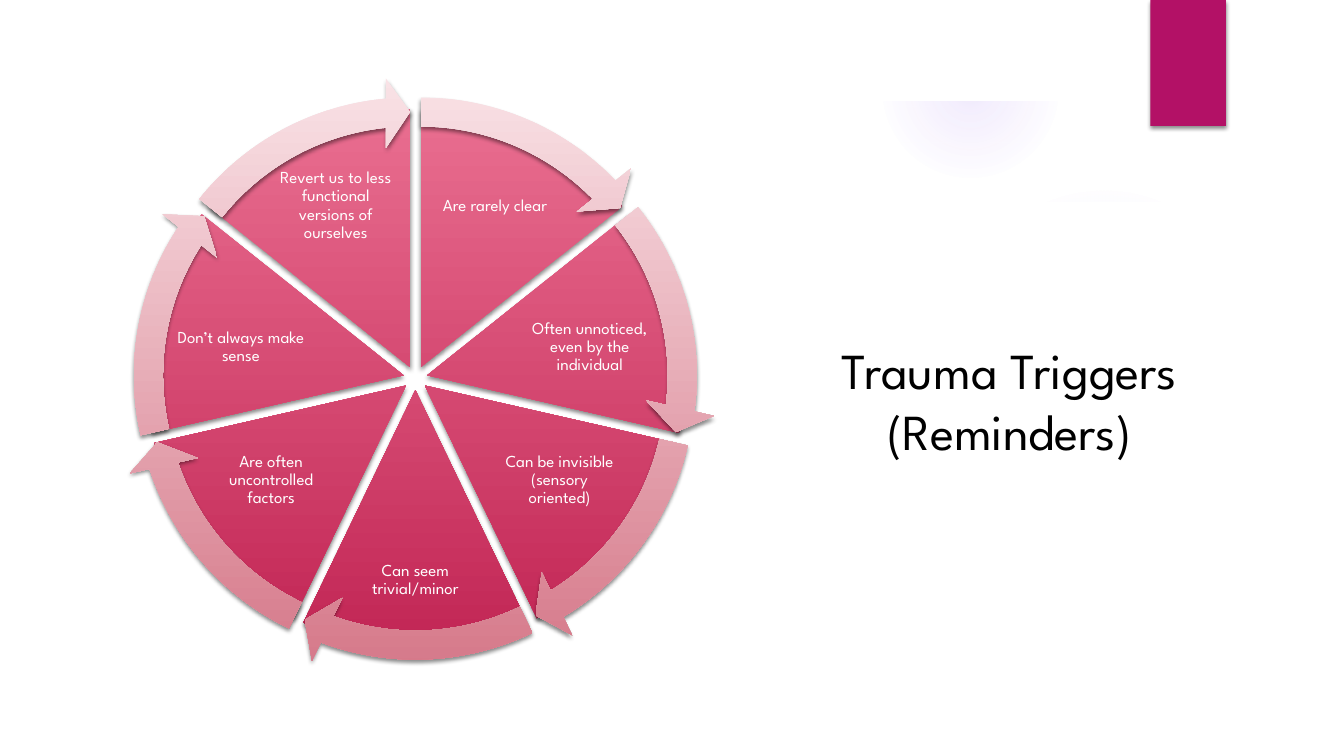
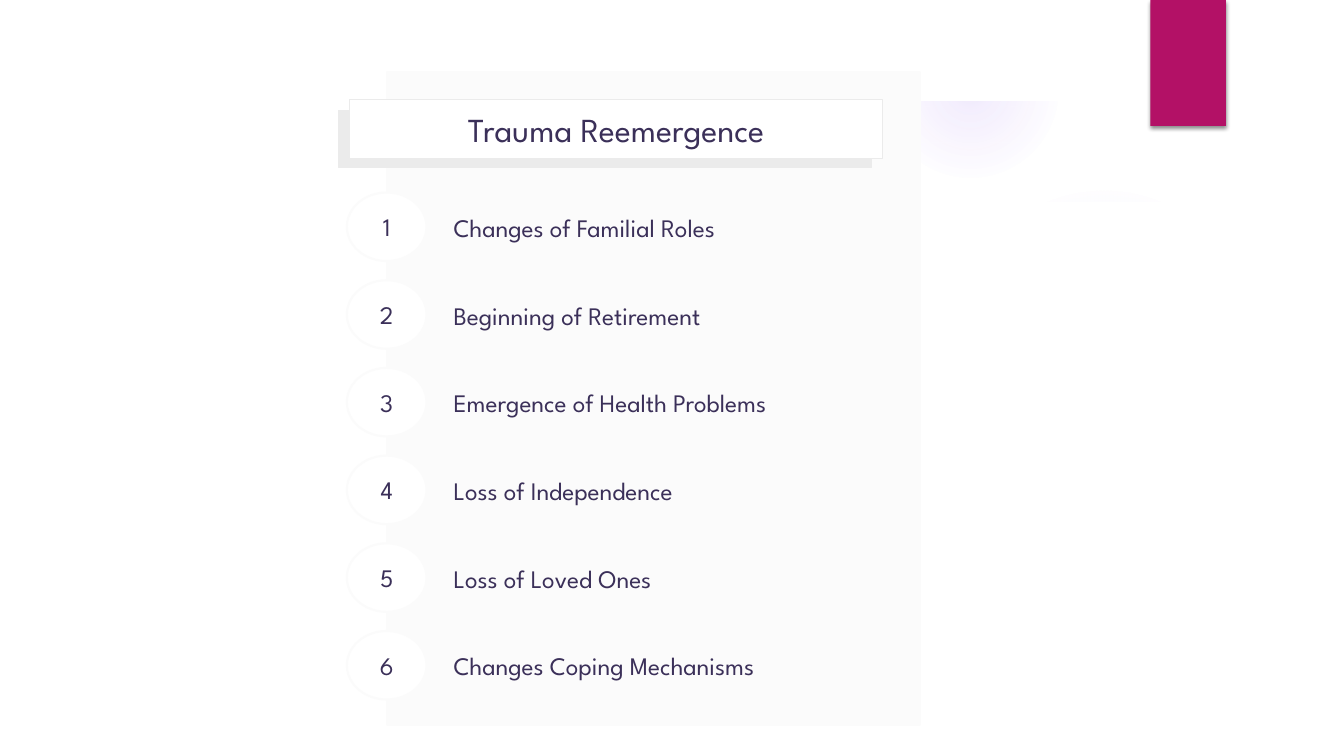
"""Build two slides on trauma: a wheel of triggers and a numbered list."""
import math
import pptx
import pptx.dml.color
import pptx.enum.shapes
import pptx.enum.text
import pptx.oxml
import pptx.oxml.ns
import pptx.util

Inch = pptx.util.Inches
Kind = pptx.enum.shapes.MSO_SHAPE
Align = pptx.enum.text.PP_ALIGN
Mid = pptx.enum.text.MSO_ANCHOR.MIDDLE
FONT = "League Spartan"
WIDE, HIGH = 13.33, 7.5
BLACK, WHITE, INK, TAB = "000000", "FFFFFF", "3B3059", "B31166"
PALE, GREY, GLOW = "FBFBFB", "EBEBEB", "9B6BF2"
WEDGE = [(0, "E96E90", 100), (100, "C22655", 100)]
ARROW = [(0, "F9E2E6", 100), (100, "D57788", 100)]

GLOWS = [
    ((9.41, 1.83, 3.08, 3.08), [(0, GLOW, 7), (36, GLOW, 6), (69, GLOW, 0)]),
    ((8.75, 0.01, 1.75, 1.75), [(0, GLOW, 14), (36, GLOW, 7), (73, GLOW, 0)]),
]
SWOOSH = [(9.34, 2.5), (10.5, 2.46), (11.7, 2.32), (12.89, 2.14), (12.83, 1.66),
          (12.25, 1.85), (11.67, 2), (11.09, 2.14), (10.53, 2.25), (9.99, 2.34), (9.3, 2.43)]
HILL = [(0.5, 2.04), (0.5, 7), (12.84, 7), (12.84, 2.04), (12.28, 2.13), (11.72, 2.2),
        (11.16, 2.27), (10.6, 2.32), (10.04, 2.37), (9.49, 2.41), (8.94, 2.44), (8.4, 2.46),
        (7.34, 2.48), (6.57, 2.48), (5.59, 2.46), (4.44, 2.41), (3.21, 2.33), (1.87, 2.21)]
OUTER = [(0, 0), (0, HIGH), (WIDE, HIGH), (WIDE, 0)]
INNER = [(12.81, 6.98), (0.52, 6.98), (0.52, 0.52), (12.81, 0.52)]

TRIGGERS = [
    "Are rarely clear",
    "Often unnoticed, even by the individual",
    "Can be invisible (sensory oriented)",
    "Can seem trivial/minor",
    "Are often uncontrolled factors",
    "Don’t always make sense",
    "Revert us to less functional versions of ourselves",
]
HUB = (4.12, 3.75)
SPOTS = [(0.79, -1.71, 1.22, 0.97), (1.73, -0.31, 1.4, 0.85),
         (1.43, 1.01, 1.22, 0.94), (0, 2, 1.19, 0.85)]
CHANGES = [
    "Changes of Familial Roles",
    "Beginning of Retirement",
    "Emergence of Health Problems",
    "Loss of Independence",
    "Loss of Loved Ones",
    "Changes Coping Mechanisms",
]


def tint(code):
    return pptx.dml.color.RGBColor.from_string(code)


def paint(shape, fill, line=None, width=0.75):
    shape.fill.solid()
    shape.fill.fore_color.rgb = tint(fill)
    if line:
        shape.line.color.rgb = tint(line)
        shape.line.width = pptx.util.Pt(width)
    else:
        shape.line.fill.background()


def blend(shape, stops, radial=False):
    """Fill a shape with a gradient of (place, colour, opacity) stops."""
    marks = "".join(
        f'<a:gs pos="{p * 1000}"><a:srgbClr val="{c}"><a:alpha val="{a * 1000}"/></a:srgbClr></a:gs>'
        for p, c, a in stops)
    way = '<a:lin ang="5400000" scaled="0"/>'
    if radial:
        way = '<a:path path="circle"><a:fillToRect l="50000" t="50000" r="50000" b="50000"/></a:path>'
    space = pptx.oxml.ns.nsdecls("a")
    shape.fill.background()
    shape.line.fill.background()
    props = shape.element.spPr
    props.replace(props.find(pptx.oxml.ns.qn("a:noFill")), pptx.oxml.parse_xml(
        f"<a:gradFill {space}><a:gsLst>{marks}</a:gsLst>{way}</a:gradFill>"))


def shade(shape):
    space = pptx.oxml.ns.nsdecls("a")
    shape.element.spPr.find(pptx.oxml.ns.qn("a:effectLst")).append(pptx.oxml.parse_xml(
        f'<a:outerShdw {space} blurRad="38100" dist="25400" dir="5400000" rotWithShape="0">'
        f'<a:srgbClr val="{BLACK}"><a:alpha val="45000"/></a:srgbClr></a:outerShdw>'))


def place(shape, box):
    shape.left, shape.top, shape.width, shape.height = map(Inch, box)


def add(slide, kind, box):
    shape = slide.shapes.add_shape(kind, *map(Inch, box))
    shape.shadow.inherit = False
    return shape


def outline(slide, *loops):
    pen = slide.shapes.build_freeform(*loops[0][0], scale=Inch(1))
    for num, loop in enumerate(loops):
        if num:
            pen.move_to(*loop[0])
        pen.add_line_segments(loop[1:], close=True)
    shape = pen.convert_to_shape()
    shape.shadow.inherit = False
    paint(shape, WHITE)
    return shape


def write(shape, text, size, color, align=Align.CENTER):
    frame = shape.text_frame
    frame.text = text
    frame.word_wrap = True
    frame.auto_size = pptx.enum.text.MSO_AUTO_SIZE.NONE
    frame.vertical_anchor = Mid
    para = frame.paragraphs[0]
    para.alignment = align
    font = para.runs[0].font
    font.name, font.size, font.color.rgb = FONT, pptx.util.Pt(size), tint(color)
    return frame


def dress(deck, slide):
    """Draw the shared backdrop and move it to the slide master."""
    parts = []
    for box, stops in GLOWS:
        glow = add(slide, Kind.OVAL, box)
        blend(glow, stops, radial=True)
        parts.append(glow)
    swoosh = outline(slide, SWOOSH)
    color = swoosh.element.spPr.find(".//" + pptx.oxml.ns.qn("a:srgbClr"))
    color.append(pptx.oxml.parse_xml(f'<a:alpha {pptx.oxml.ns.nsdecls("a")} val="20000"/>'))
    parts += [swoosh, outline(slide, HILL), outline(slide, OUTER, INNER)]
    tab = add(slide, Kind.RECTANGLE, (11.41, 0, 0.75, 1.25))
    paint(tab, TAB)
    shade(tab)
    parts.append(tab)
    for num, part in enumerate(parts, 100):
        part.element.nvSpPr.cNvPr.set("id", str(num))
        deck.slide_master.shapes.element.append(part.element)


def wheel(slide):
    title = slide.shapes.title
    place(title, (7.9, 0.92, 4.22, 6.09))
    write(title, "Trauma Triggers (Reminders)", 36, BLACK)
    count = len(TRIGGERS)
    step, unit, gap, head = 360 / count, 0.6, 0.12, 5.46
    for kind, size, stops in [(Kind.PIE, 5.12, WEDGE), (Kind.CIRCULAR_ARROW, 5.75, ARROW)]:
        for num in range(count):
            start = 270 + num * step
            mid = math.radians(start + step / 2)
            left = HUB[0] + gap * math.cos(mid) - size / 2
            top = HUB[1] + gap * math.sin(mid) - size / 2
            part = add(slide, kind, (left, top, size, size))
            first, last = start % 360 * unit, (start + step) % 360 * unit
            turns = [first, last]
            if kind == Kind.CIRCULAR_ARROW:
                end = (start + step - head) % 360 * unit
                turns = [0.05, head * unit, end, first, 0.06]
            for slot, turn in enumerate(turns):
                part.adjustments[slot] = turn
            blend(part, stops)
            shade(part)
    spots = SPOTS + [(-x, y, w, h) for x, y, w, h in SPOTS[2::-1]]
    for text, (x, y, w, h) in zip(TRIGGERS, spots):
        box = slide.shapes.add_textbox(
            *map(Inch, (HUB[0] + x - w / 2, HUB[1] + y - h / 2, w, h)))
        frame = write(box, text, 12, WHITE)
        frame.margin_left = frame.margin_right = Inch(0.02)
        frame.margin_top = frame.margin_bottom = Inch(0.02)
        frame.paragraphs[0].line_spacing = 0.9


def ladder(slide):
    paint(add(slide, Kind.RECTANGLE, (3.84, 0.71, 5.28, 6.48)), PALE, PALE, 1.5)
    paint(add(slide, Kind.RECTANGLE, (3.36, 1.1, 5.28, 0.56)), GREY, GREY)
    title = slide.shapes.title
    slide.shapes.element.append(title.element)
    place(title, (3.47, 0.99, 5.28, 0.58))
    paint(title, WHITE, GREY)
    write(title, "Trauma Reemergence", 24, INK)
    for num, text in enumerate(CHANGES):
        top = 1.91 + num * 0.87
        disc = add(slide, Kind.OVAL, (3.44, top, 0.79, 0.68))
        paint(disc, WHITE, PALE, 1.5)
        write(disc, str(num + 1), 18, INK)
        label = add(slide, Kind.RECTANGLE, (4.4, top + 0.12, 4.35, 0.45))
        paint(label, PALE, PALE)
        write(label, text, 18, INK, Align.LEFT)


def main():
    deck = pptx.Presentation()
    deck.slide_width, deck.slide_height = Inch(WIDE), Inch(HIGH)
    first, second = [deck.slides.add_slide(deck.slide_layouts[5]) for _ in range(2)]
    dress(deck, first)
    wheel(first)
    ladder(second)
    deck.save("out.pptx")


if __name__ == "__main__":
    main()
